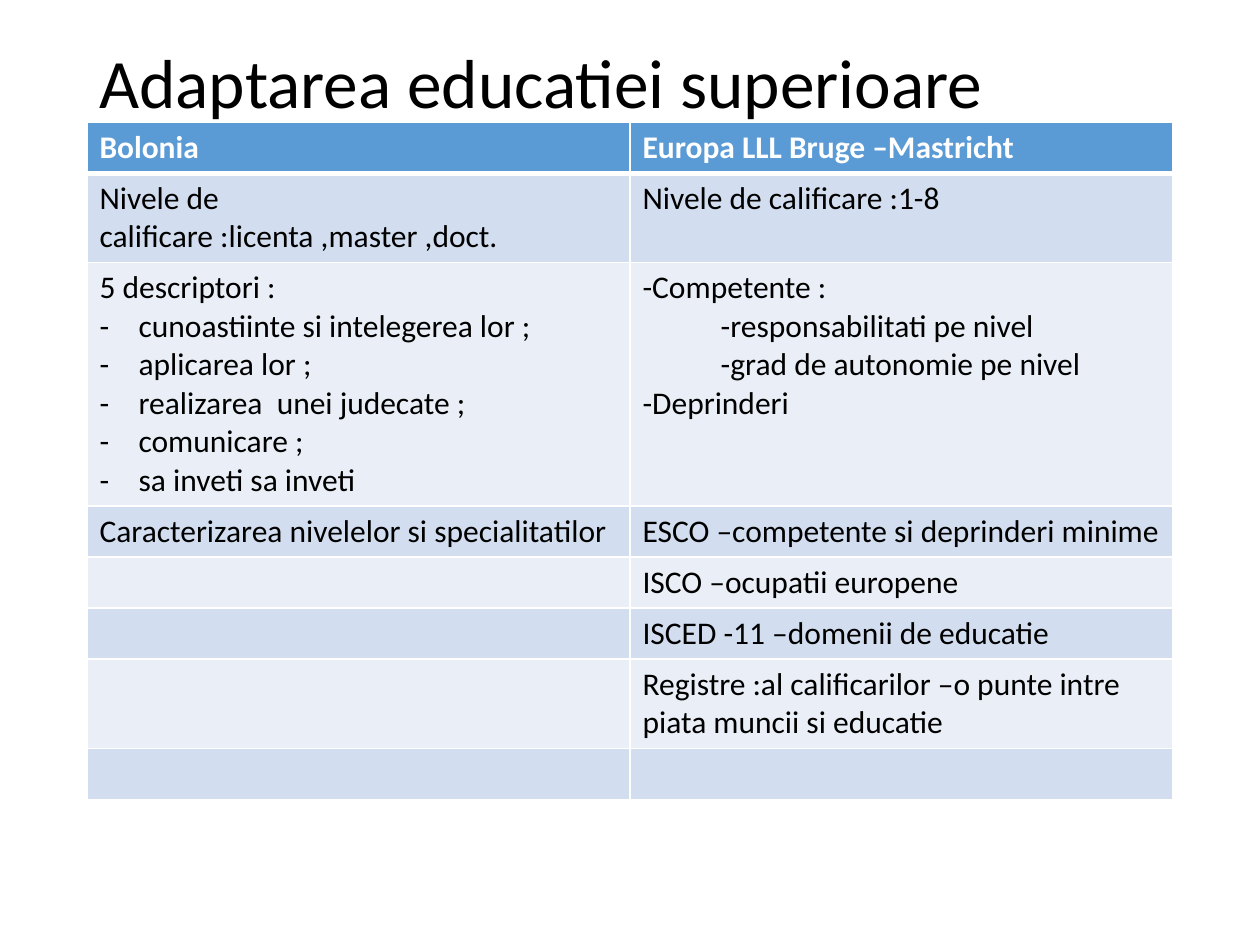
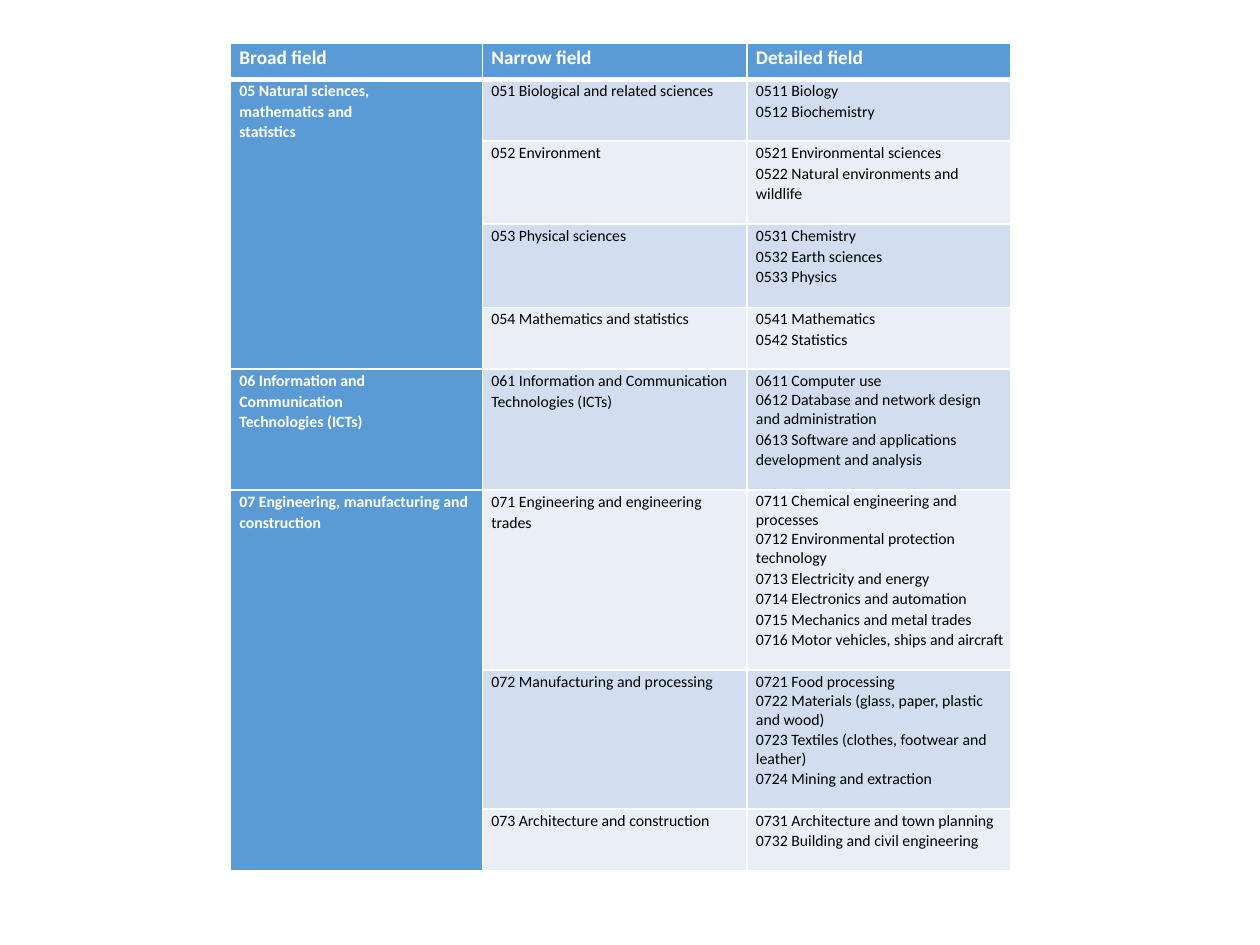
from dataclasses import dataclass

from lxml.etree import SubElement
from pptx import Presentation
from pptx.dml.color import RGBColor
from pptx.enum.text import MSO_ANCHOR
from pptx.oxml.ns import qn
from pptx.util import Emu, Inches, Pt


@dataclass(frozen=True)
class Theme:
    font: str = "Calibri"
    header: RGBColor = RGBColor(0x5B, 0x9B, 0xD5)
    bands: tuple = (RGBColor(0xD2, 0xDE, 0xEF), RGBColor(0xEA, 0xEF, 0xF7))
    white: RGBColor = RGBColor(0xFF, 0xFF, 0xFF)
    black: RGBColor = RGBColor(0, 0, 0)
    title_size: float = 39.6
    table_size: int = 18
    field_head_size: int = 11
    field_size: int = 9


theme = Theme()


def add_grid(s, left, top, widths, heights):
    """Add a plain table with white rules and a heavier one under the header."""
    frame = s.shapes.add_table(len(heights), len(widths), Inches(left), Inches(top),
                               Inches(sum(widths)), Inches(sum(heights)))
    table = frame.table
    table.horz_banding = False
    for column, width in zip(table.columns, widths):
        column.width = Inches(width)
    for i, height in enumerate(heights):
        table.rows[i].height = Inches(height)
        for cell in table.rows[i].cells:
            tc_pr = cell._tc.get_or_add_tcPr()
            heavy = {0: "lnB", 1: "lnT"}.get(i)
            for side in ("lnL", "lnR", "lnT", "lnB"):
                width = Pt(3 if side == heavy else 1)
                ln = SubElement(tc_pr, qn("a:" + side), w=str(width))
                fill = SubElement(ln, qn("a:solidFill"))
                SubElement(fill, qn("a:srgbClr"), val=str(theme.white))
    return table


def write_cell(cell, text, fill, size, header=False):
    """Fill a cell and set its text, one paragraph a line."""
    cell.fill.solid()
    cell.fill.fore_color.rgb = fill
    cell.text_frame.text = text
    for p in cell.text_frame.paragraphs:
        for r in p.runs:
            r.font.name = theme.font
            r.font.size = Pt(size)
            r.font.bold = header
            r.font.color.rgb = theme.white if header else theme.black


prs = Presentation()
prs.slide_width, prs.slide_height = Inches(10), Inches(7.5)
blank = prs.slide_layouts[6]

# Slide 1: title
s = prs.slides.add_slide(blank)
sp = s.shapes.add_textbox(Inches(0.69), Inches(0.4), Inches(8.62), Inches(0.57))
tf = sp.text_frame
tf.word_wrap = True
tf.vertical_anchor = MSO_ANCHOR.MIDDLE
tf.text = "Adaptarea educatiei superioare"
p = tf.paragraphs[0]
p.line_spacing = 0.9
r = p.runs[0]
r.font.name = theme.font
r.font.size = Pt(theme.title_size)
r.font.color.rgb = theme.black

# Slide 1: comparison table; "* " marks a dash bullet, "> " an indented line
comparison = [
    ("Bolonia", "Europa LLL Bruge –Mastricht"),
    ("Nivele de calificare :licenta ,master ,doct.", "Nivele de calificare :1-8"),
    ("5 descriptori :\n* cunoastiinte si intelegerea lor ;\n* aplicarea lor ;\n"
     "* realizarea  unei judecate ;\n* comunicare ;\n* sa inveti sa inveti",
     "-Competente :\n> -responsabilitati pe nivel\n> -grad de autonomie pe nivel\n-Deprinderi"),
    ("Caracterizarea nivelelor si specialitatilor", "ESCO –competente si deprinderi minime"),
    ("", "ISCO –ocupatii europene"),
    ("", "ISCED -11 –domenii de educatie"),
    ("", "Registre :al calificarilor –o punte intre piata muncii si educatie"),
    ("", ""),
]
line_counts = [1, 2, 6, 1, 1, 1, 2, 1]
table = add_grid(s, 0.69, 0.97, [4.31, 4.31], [0.1 + 0.305 * n for n in line_counts])
for i, row in enumerate(comparison):
    fill = theme.bands[(i - 1) % 2] if i else theme.header
    for j, text in enumerate(row):
        cell = table.cell(i, j)
        write_cell(cell, text, fill, theme.table_size, header=i == 0)
        for p in cell.text_frame.paragraphs:
            mark = p.text[:2]
            if mark not in ("* ", "> "):
                continue
            p.runs[0].text = p.text[2:]
            p_pr = p._p.get_or_add_pPr()
            if mark == "* ":
                p_pr.set("marL", str(Inches(0.31)))
                p_pr.set("indent", str(-Inches(0.31)))
                SubElement(p_pr, qn("a:buFont"), typeface=theme.font)
                SubElement(p_pr, qn("a:buChar"), char="-")
            else:
                p_pr.set("marL", str(Inches(0.62)))

# Slide 2: fields of education
s = prs.slides.add_slide(blank)
fields = [
    ("Broad field", "Narrow field", "Detailed field"),
    ("05 Natural sciences,\nmathematics and\nstatistics",
     "051 Biological and related sciences", "0511 Biology\n0512 Biochemistry"),
    ("", "052 Environment",
     "0521 Environmental sciences\n0522 Natural environments and wildlife"),
    ("", "053 Physical sciences", "0531 Chemistry\n0532 Earth sciences\n0533 Physics"),
    ("", "054 Mathematics and statistics", "0541 Mathematics\n0542 Statistics"),
    ("06 Information and\nCommunication\nTechnologies (ICTs)",
     "061 Information and Communication\nTechnologies (ICTs)",
     "0611 Computer use\n0612 Database and network design and administration\n"
     "0613 Software and applications\ndevelopment and analysis"),
    ("07 Engineering, manufacturing and construction",
     "071 Engineering and engineering trades",
     "0711 Chemical engineering and processes\n0712 Environmental protection technology\n"
     "0713 Electricity and energy\n0714 Electronics and automation\n"
     "0715 Mechanics and metal trades\n0716 Motor vehicles, ships and aircraft"),
    ("", "072 Manufacturing and processing",
     "0721 Food processing\n0722 Materials (glass, paper, plastic and wood)\n"
     "0723 Textiles (clothes, footwear and leather)\n0724 Mining and extraction"),
    ("", "073 Architecture and construction",
     "0731 Architecture and town planning\n0732 Building and civil engineering"),
]
single_spaced = ("0612", "0711", "0712", "0722", "0723")
heights = [0.29, 0.49, 0.66, 0.66, 0.49, 0.96, 1.43, 1.1, 0.49]
table = add_grid(s, 1.83, 0.34, [2.0, 2.1, 2.09], heights)
for first, last in ((1, 4), (6, 8)):
    table.cell(first, 0).merge(table.cell(last, 0))
for i, row in enumerate(fields):
    size = theme.field_size if i else theme.field_head_size
    for j, text in enumerate(row):
        cell = table.cell(i, j)
        header = i == 0 or j == 0
        fill = theme.header if header else theme.bands[(i - 1) % 2]
        write_cell(cell, text, fill, size, header)
        cell.margin_left, cell.margin_right = Inches(0.07), Inches(0.04)
        cell.margin_top, cell.margin_bottom = Inches(0.01), Emu(0)
        for p in cell.text_frame.paragraphs:
            p.line_spacing = 1.0 if p.text.startswith(single_spaced) else 1.07

prs.save("out.pptx")
